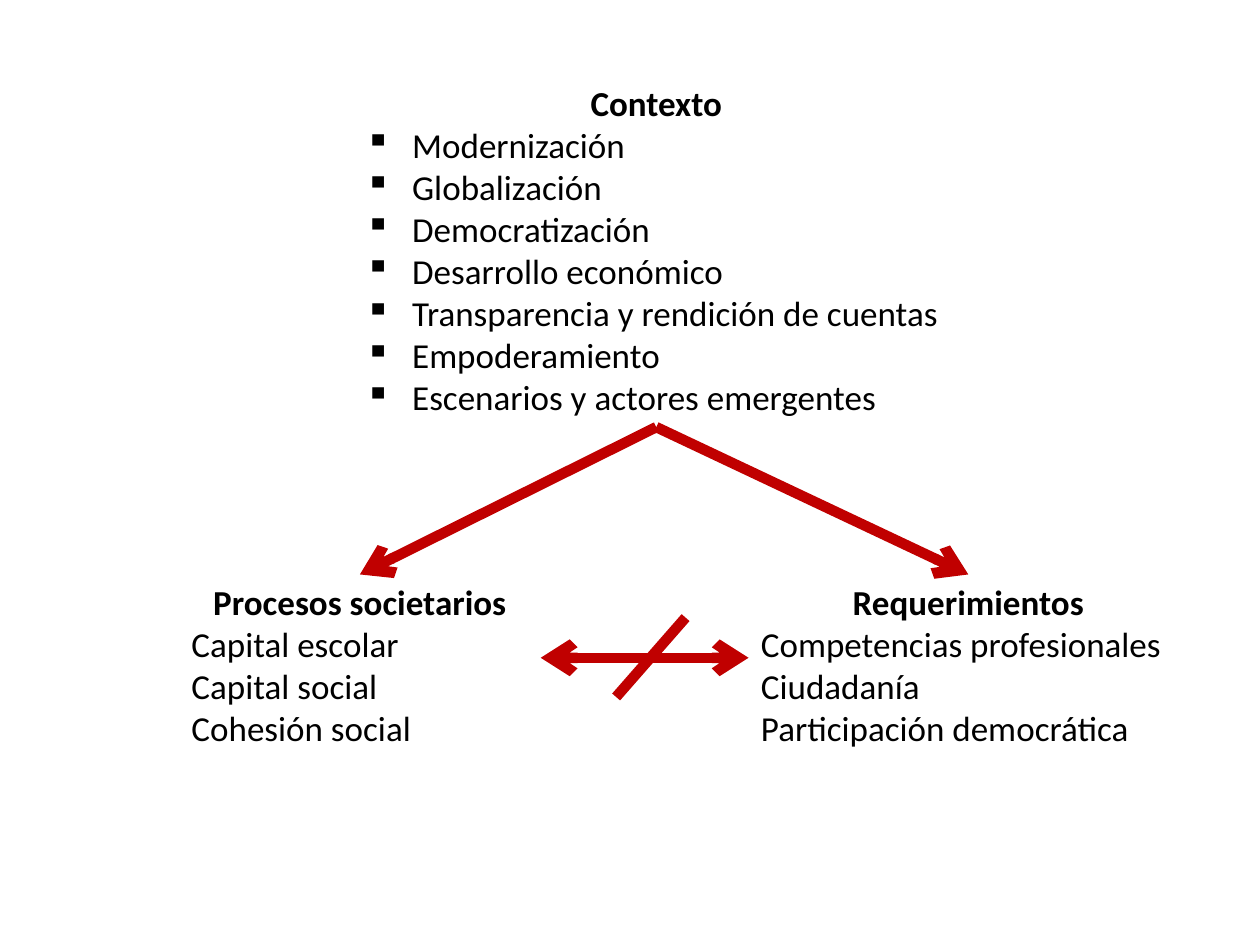
from lxml.etree import SubElement
from pptx import Presentation
from pptx.dml.color import RGBColor
from pptx.enum.shapes import MSO_CONNECTOR
from pptx.enum.text import MSO_AUTO_SIZE, PP_ALIGN
from pptx.oxml.ns import qn
from pptx.util import Cm, Pt

COLORS = {"text": "000000", "arrow": "C00000"}
FONT = {"name": "Calibri", "size": Pt(20)}
FRAME = {"word_wrap": True, "auto_size": MSO_AUTO_SIZE.SHAPE_TO_FIT_TEXT}
BULLET_INDENT = Cm(0.95)
BOTTOM, TOP = 2, 0
LOWER_TOP, LOWER_HEIGHT = 11.58, 3.68

CONTEXT = [
    "Modernización",
    "Globalización",
    "Democratización",
    "Desarrollo económico",
    "Transparencia y rendición de cuentas",
    "Empoderamiento",
    "Escenarios y actores emergentes",
]
PROCESSES = ["Capital escolar", "Capital social", "Cohesión social"]
REQUIREMENTS = ["Competencias profesionales", "Ciudadanía", "Participación democrática"]


def set_attributes(target, values):
    """Set each named value on the target object."""
    for name, value in values.items():
        setattr(target, name, value)


def add_bullet(para):
    """Give a paragraph a square bullet with a hanging indent."""
    properties = para._p.get_or_add_pPr()
    properties.set("marL", str(BULLET_INDENT))
    properties.set("indent", str(-BULLET_INDENT))
    SubElement(properties, qn("a:buChar"), char="▪")


def add_list_box(page, place, heading, items, bulleted=False):
    """Add a text box with a centred bold heading above a list."""
    box = page.shapes.add_textbox(*(Cm(length) for length in place))
    frame = box.text_frame
    set_attributes(frame, FRAME)
    for index, text in enumerate([heading, *items]):
        is_heading = index == 0
        para = frame.paragraphs[0] if is_heading else frame.add_paragraph()
        para.alignment = PP_ALIGN.CENTER if is_heading else PP_ALIGN.LEFT
        if bulleted and not is_heading:
            add_bullet(para)
        span = para.add_run()
        span.text = text
        set_attributes(span.font, {**FONT, "bold": is_heading})
        span.font.color.rgb = RGBColor.from_string(COLORS["text"])
    return box


def add_line(page, ends=(0, 0, 0, 0), arrowheads=()):
    """Add a thick straight line with the given arrowheads."""
    line = page.shapes.add_connector(
        MSO_CONNECTOR.STRAIGHT, *(Cm(length) for length in ends)
    )
    line.line.width = Pt(6)
    line.line.color.rgb = RGBColor.from_string(COLORS["arrow"])
    outline = line.line._get_or_add_ln()
    for arrowhead in arrowheads:
        SubElement(outline, qn(f"a:{arrowhead}"), type="arrow")
    SubElement(line._element.spPr, qn("a:effectLst"))
    return line


def main():
    """Build the slide and save the deck."""
    deck = Presentation()
    set_attributes(deck, {"slide_width": Cm(25.4), "slide_height": Cm(19.05)})
    page = deck.slides.add_slide(deck.slide_layouts[6])

    add_line(page, (10.9, 13.26, 15.09, 13.26), ("headEnd", "tailEnd"))
    add_line(page, (13.82, 12.45, 12.42, 14.05))

    context = add_list_box(
        page, (7.11, 1.52, 12.24, 7.09), "Contexto", CONTEXT, bulleted=True
    )
    for left, width, heading, items in (
        (3.61, 7.29, "Procesos societarios", PROCESSES),
        (15.09, 8.86, "Requerimientos", REQUIREMENTS),
    ):
        place = (left, LOWER_TOP, width, LOWER_HEIGHT)
        box = add_list_box(page, place, heading, items)
        arrow = add_line(page, arrowheads=("tailEnd",))
        arrow.begin_connect(context, BOTTOM)
        arrow.end_connect(box, TOP)

    deck.save("out.pptx")


if __name__ == "__main__":
    main()
